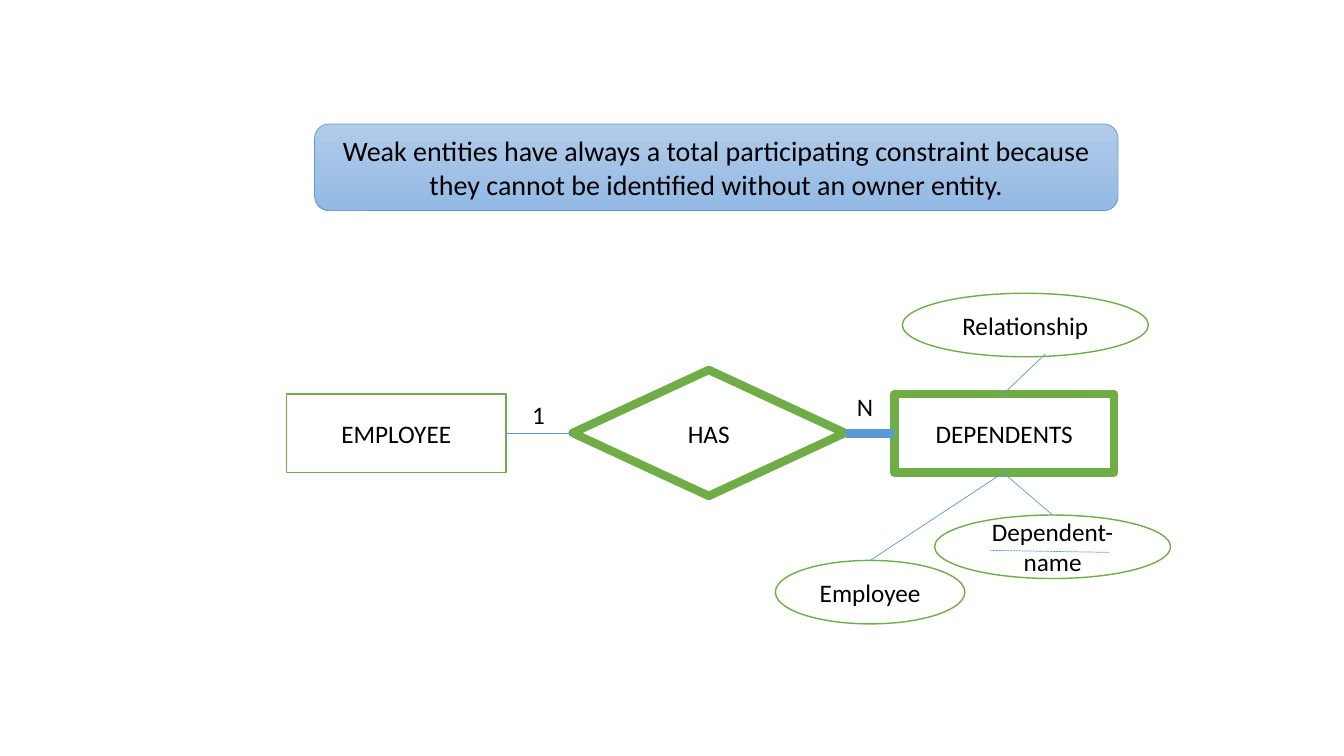
from lxml.etree import SubElement
from pptx import Presentation
from pptx.dml.color import RGBColor
from pptx.enum.dml import MSO_LINE
from pptx.enum.shapes import MSO_CONNECTOR, MSO_SHAPE
from pptx.enum.text import MSO_ANCHOR, MSO_AUTO_SIZE, PP_ALIGN
from pptx.oxml.ns import qn
from pptx.util import Inches, Pt

COLORS = {
    "text": "000000",
    "white": "FFFFFF",
    "green": "70AD47",
    "blue": "5B9BD5",
    "light": "B1CBE9",
    "deep": "93B9E4",
}


def color(name):
    return RGBColor.from_string(COLORS[name])


def write(shape, text, size=18, align=PP_ALIGN.CENTER, anchor=MSO_ANCHOR.MIDDLE):
    frame = shape.text_frame
    frame.word_wrap = True
    frame.vertical_anchor = anchor
    line = frame.paragraphs[0]
    line.alignment = align
    run = line.add_run()
    run.text = text
    run.font.name = "Calibri"
    run.font.size = Pt(size)
    run.font.color.rgb = color("text")


deck = Presentation()
deck.slide_width, deck.slide_height = Inches(13.33), Inches(7.5)
slide = deck.slides.add_slide(deck.slide_layouts[6])
shapes = slide.shapes

# Statement at the top
banner = shapes.add_shape(MSO_SHAPE.ROUNDED_RECTANGLE,
                          Inches(3.12), Inches(1.23), Inches(7.97), Inches(0.86))
banner.shadow.inherit = False
banner.fill.gradient()
banner.fill.gradient_angle = 270
for stop, name in zip(banner.fill.gradient_stops, ("light", "deep")):
    stop.color.rgb = color(name)
banner.line.color.rgb = color("blue")
banner.line.width = Pt(0.5)
write(banner, "Weak entities have always a total participating constraint because "
              "they cannot be identified without an owner entity.", size=20)

# Entities, relationship and attributes: kind, text, left, top, width, height, border
BOX, RHOMB, OVAL = MSO_SHAPE.RECTANGLE, MSO_SHAPE.DIAMOND, MSO_SHAPE.OVAL
nodes = [
    (BOX, "EMPLOYEE", 2.84, 3.91, 2.18, 0.78, 1),
    (BOX, "DEPENDENTS", 8.87, 3.91, 2.18, 0.78, 6),
    (RHOMB, "HAS", 5.68, 3.67, 2.7, 1.25, 6),
    (OVAL, "Employee", 7.69, 5.56, 1.88, 0.63, 1),
    (OVAL, "Dependent-name", 9.27, 5.11, 2.34, 0.63, 1),
    (OVAL, "Relationship", 8.95, 2.91, 2.44, 0.63, 1),
]
for kind, text, left, top, width, height, border in nodes:
    node = shapes.add_shape(kind, Inches(left), Inches(top), Inches(width), Inches(height))
    node.shadow.inherit = False
    node.fill.solid()
    node.fill.fore_color.rgb = color("white")
    node.line.color.rgb = color("green")
    node.line.width = Pt(border)
    write(node, text)

# Lines: start, end, width, dash
links = [
    (5.01, 4.3, 5.68, 4.3, 0.5, None),
    (8.39, 4.3, 8.87, 4.3, 6, None),
    (9.95, 4.69, 8.63, 5.56, 0.5, None),
    (9.95, 4.69, 10.44, 5.11, 0.5, None),
    (10.37, 3.51, 9.95, 3.91, 0.5, None),
    (9.82, 5.46, 11, 5.48, 0.5, MSO_LINE.SQUARE_DOT),
]
for x1, y1, x2, y2, width, dash in links:
    link = shapes.add_connector(MSO_CONNECTOR.STRAIGHT,
                                Inches(x1), Inches(y1), Inches(x2), Inches(y2))
    link.line.color.rgb = color("blue")
    link.line.width = Pt(width)
    if dash:
        link.line.dash_style = dash
    SubElement(link._element.spPr, qn("a:effectLst"))

# Cardinalities
for text, left, top in [("N", 8.4, 3.83), ("1", 5.18, 3.91)]:
    label = shapes.add_textbox(Inches(left), Inches(top), Inches(0.39), Inches(0.4))
    write(label, text, align=PP_ALIGN.LEFT, anchor=MSO_ANCHOR.TOP)
    label.text_frame.auto_size = MSO_AUTO_SIZE.SHAPE_TO_FIT_TEXT

deck.save("out.pptx")
